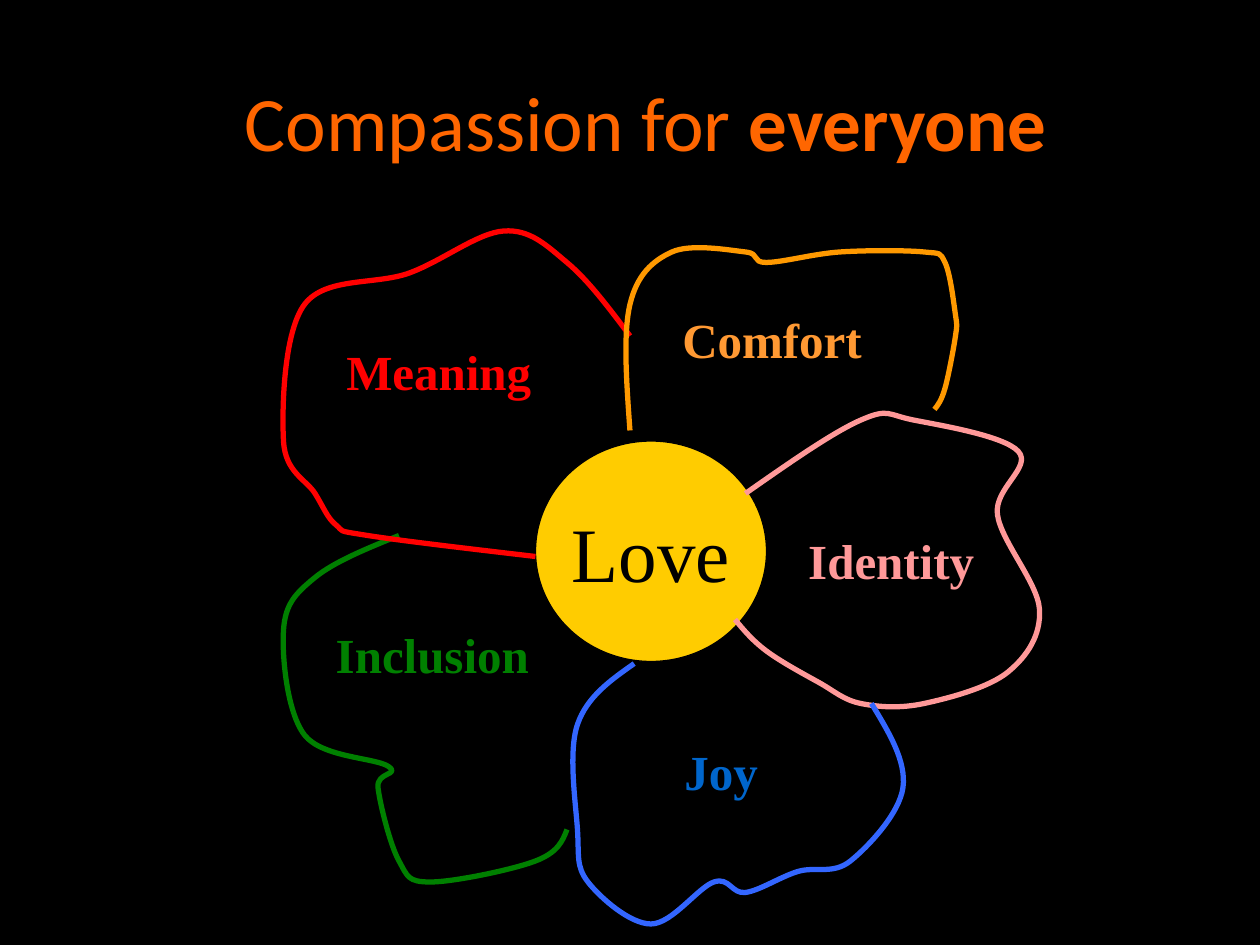
import pptx
import pptx.dml.color
import pptx.enum.shapes
import pptx.enum.text
import pptx.oxml
import pptx.oxml.ns
import pptx.util

Cm, Pt = pptx.util.Cm, pptx.util.Pt
PP_ALIGN = pptx.enum.text.PP_ALIGN
MSO_ANCHOR = pptx.enum.text.MSO_ANCHOR

COLORS = {
    "background": "000000", "title": "FF6600", "heart": "FFCC00", "ink": "000000",
    "pink": "FF9999", "blue": "3366FF", "deep blue": "0066CC", "green": "008000",
    "red": "FF0000", "amber": "FF9900", "orange": "FF9933",
}
SERIF = "Times New Roman"
GRID = 25.4 / 120  # the slide is 120 by 90 grid units

# Label, outline colour, text colour, label box and outline knots, in grid units of the flower
PETALS = [
    ("Identity", "pink", "pink", (48.8, 27.9, 18.2, 6.8),
     [(44, 25), (55, 18), (60, 18), (70, 21), (68, 27), (72, 36),
      (69, 42), (61, 45), (55, 45), (51, 43), (46, 40), (43, 37)]),
    ("Joy", "blue", "deep blue", (37, 48, 9.4, 6.8),
     [(56, 45), (59, 53), (54, 60), (49, 61), (44, 63), (41, 62),
      (35, 66), (29, 62), (28, 57), (28, 47), (33.4, 41.2)]),
    ("Inclusion", "green", "green", (3.8, 36.9, 20.9, 6.8),
     [(27, 57), (24, 60), (14, 62), (11, 60), (9, 53),
      (10, 51), (2, 48), (0, 38), (3, 33), (11, 29)]),
    ("Meaning", "red", "red", (4.8, 9.9, 20, 6.8),
     [(24, 31), (8, 29), (5, 28), (3, 25), (0, 20),
      (2, 7), (12, 4), (21, 0), (27, 3), (33, 10)]),
    ("Comfort", "amber", "orange", (36.8, 6.9, 19.6, 6.8),
     [(33, 19), (33, 7), (37, 2), (44, 2), (46, 3), (53, 2),
      (61, 2), (63, 3), (64, 8), (64, 10), (63, 15), (62, 17)]),
]


def rgb(name):
    return pptx.dml.color.RGBColor.from_string(COLORS[name])


def grid_box(box, left=0, top=0):
    """Turn a box in grid units into lengths, shifted by left and top."""
    x, y, w, h = box
    return [Cm(v * GRID) for v in (left + x, top + y, w, h)]


def write(tf, runs, size, font, color, align=PP_ALIGN.LEFT,
          anchor=MSO_ANCHOR.TOP, wrap=False):
    """Fill a text frame with one paragraph of (text, bold) runs."""
    tf.word_wrap = wrap
    tf.vertical_anchor = anchor
    p = tf.paragraphs[0]
    p.alignment = align
    for text, bold in runs:
        r = p.add_run()
        r.text = text
        r.font.size, r.font.name, r.font.bold = Pt(size), font, bold
        r.font.color.rgb = rgb(color)


def spline_controls(pts):
    """Return the two control points of each curve through the knots."""
    def toward(a, b, c):
        return tuple(v + (n - m) / 6 for m, v, n in zip(a, b, c))

    def middle(a, b):
        return tuple((m + n) / 2 for m, n in zip(a, b))

    controls = []
    for i in range(len(pts) - 1):
        a, b = pts[i], pts[i + 1]
        c1 = toward(pts[i - 1], a, b) if i > 0 else None
        c2 = toward(pts[i + 2], b, a) if i + 2 < len(pts) else None
        controls.append((c1 or middle(a, c2), c2 or middle(b, c1)))
    return controls


def smooth_path(sp):
    """Replace the straight segments of a freeform by smooth curves."""
    qn = pptx.oxml.ns.qn
    path = next(sp.element.iter(qn("a:path")))
    pts = [(int(pt.get("x")), int(pt.get("y"))) for pt in path.iter(qn("a:pt"))]
    segments = path.findall(qn("a:lnTo"))
    for seg, controls, end in zip(segments, spline_controls(pts), pts[1:]):
        points = "".join(f'<a:pt x="{round(x)}" y="{round(y)}"/>'
                         for x, y in (*controls, end))
        path.replace(seg, pptx.oxml.parse_xml(
            f'<a:cubicBezTo {pptx.oxml.ns.nsdecls("a")}>{points}</a:cubicBezTo>'))


def add_title(slide, box):
    tb = slide.shapes.add_textbox(*grid_box(box))
    write(tb.text_frame, [("Compassion for ", False), ("everyone", True)], 44,
          "Calibri", "title", PP_ALIGN.CENTER, MSO_ANCHOR.MIDDLE, wrap=True)


def add_petal(slide, left, top, label, line, ink, label_box, knots):
    # Outline
    pts = [(Cm((left + x) * GRID), Cm((top + y) * GRID)) for x, y in knots]
    builder = slide.shapes.build_freeform(*pts[0])
    builder.add_line_segments(pts[1:], close=False)
    sp = builder.convert_to_shape()
    smooth_path(sp)
    sp.shadow.inherit = False
    sp.fill.background()
    sp.line.color.rgb = rgb(line)
    sp.line.width = Pt(3)

    # Label
    tb = slide.shapes.add_textbox(*grid_box(label_box, left, top))
    write(tb.text_frame, [(label, True)], 28, SERIF, ink)


def add_flower(slide, left, top):
    # Heart of the flower
    sp = slide.shapes.add_shape(pptx.enum.shapes.MSO_SHAPE.OVAL,
                                *grid_box((24, 20, 22, 21), left, top))
    sp.shadow.inherit = False
    sp.fill.solid()
    sp.fill.fore_color.rgb = rgb("heart")
    sp.line.color.rgb = rgb("ink")
    sp.line.width = Pt(0.75)
    write(sp.text_frame, [("Love", False)], 44, SERIF, "ink",
          PP_ALIGN.CENTER, MSO_ANCHOR.MIDDLE)

    # Petals
    for petal in PETALS:
        add_petal(slide, left, top, *petal)


def main():
    prs = pptx.Presentation()
    prs.slide_width, prs.slide_height = Cm(25.4), Cm(19.05)
    slide = prs.slides.add_slide(prs.slide_layouts[6])
    slide.background.fill.solid()
    slide.background.fill.fore_color.rgb = rgb("background")
    add_title(slide, (3, 4, 117, 15))
    add_flower(slide, 27, 22)
    prs.save("out.pptx")


if __name__ == "__main__":
    main()
